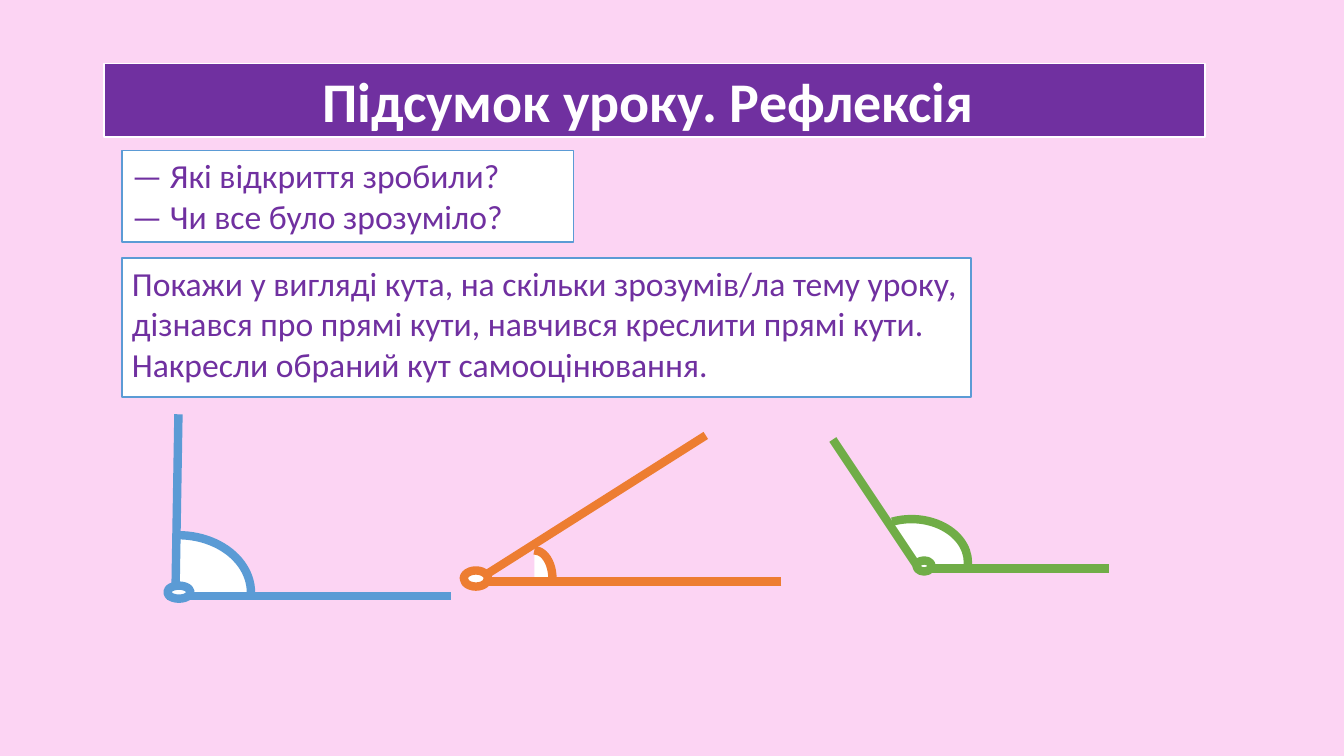
"""Build the lesson summary slide with three angles for self-assessment."""
from lxml.etree import SubElement
from pptx import Presentation
from pptx.dml.color import RGBColor
from pptx.enum.shapes import MSO_CONNECTOR as CONN, MSO_SHAPE as SHAPE
from pptx.enum.text import MSO_ANCHOR as ANCHOR, PP_ALIGN as ALIGN
from pptx.oxml.ns import qn
from pptx.util import Inches, Pt

PINK = RGBColor(0xFC, 0xD4, 0xF3)
PURPLE = RGBColor(0x70, 0x30, 0xA0)
WHITE = RGBColor(0xFF, 0xFF, 0xFF)
BLUE = RGBColor(0x5B, 0x9B, 0xD5)
ORANGE = RGBColor(0xED, 0x7D, 0x31)
GREEN = RGBColor(0x70, 0xAD, 0x47)


def add_shape(shapes, kind, box, fill, line, width):
    """Add a preset shape with a plain fill and outline."""
    sp = shapes.add_shape(kind, *map(Inches, box))
    sp.shadow.inherit = False
    sp.fill.solid()
    sp.fill.fore_color.rgb = fill
    sp.line.color.rgb = line
    sp.line.width = Pt(width)
    return sp


def write(sp, *lines, size=24, color=PURPLE, bold=False, align=ALIGN.LEFT, anchor=ANCHOR.TOP):
    """Write each line as a paragraph of the shape."""
    tf = sp.text_frame
    tf.word_wrap = True
    tf.vertical_anchor = anchor
    for i, line in enumerate(lines):
        p = tf.add_paragraph() if i else tf.paragraphs[0]
        p.alignment = align
        r = p.add_run()
        r.text = line
        r.font.name = "Calibri"
        r.font.size = Pt(size)
        r.font.bold = bold
        r.font.color.rgb = color


def add_side(shapes, start, end, color):
    """Add one straight side of an angle."""
    side = shapes.add_connector(CONN.STRAIGHT, *map(Inches, start + end))
    side.line.color.rgb = color
    side.line.width = Pt(6)
    SubElement(side._element.spPr, qn("a:effectLst"))


def add_angle(s, color, sides, vertex, center, radii, start=270, end=0):
    """Add a grouped angle: arc from start to end degrees, two sides and a vertex."""
    shapes = s.shapes.add_group_shape().shapes
    (x, y), (rx, ry) = center, radii
    arc = add_shape(shapes, SHAPE.ARC, (x - rx, y - ry, 2 * rx, 2 * ry), WHITE, color, 6)
    arc.adjustments[0] = start * 0.6
    arc.adjustments[1] = end * 0.6
    for side in sides:
        add_side(shapes, *side, color)
    add_shape(shapes, SHAPE.OVAL, vertex, WHITE, color, 6)


def main():
    """Create the presentation and save it."""
    prs = Presentation()
    prs.slide_width, prs.slide_height = Inches(13.33), Inches(7.5)
    s = prs.slides.add_slide(prs.slide_layouts[6])
    s.background.fill.solid()
    s.background.fill.fore_color.rgb = PINK

    questions = add_shape(s.shapes, SHAPE.RECTANGLE, (1.21, 1.49, 4.48, 0.91), WHITE, BLUE, 1)
    write(questions, "— Які відкриття зробили?", "— Чи все було зрозуміло?")

    add_angle(s, BLUE, [((1.74, 5.92), (1.77, 4.11)), ((4.47, 5.91), (1.66, 5.91))],
              vertex=(1.66, 5.81, 0.23, 0.13), center=(1.77, 5.88), radii=(0.72, 0.57))
    add_angle(s, ORANGE, [((7.75, 5.77), (4.76, 5.77)), ((4.68, 5.79), (7, 4.32))],
              vertex=(4.6, 5.66, 0.24, 0.16), center=(5.3, 5.74), radii=(0.18, 0.28))
    add_angle(s, GREEN, [((9.12, 5.65), (8.26, 4.36)), ((9.12, 5.64), (11, 5.64))],
              vertex=(9.09, 5.56, 0.15, 0.11), center=(9.04, 5.58), radii=(0.56, 0.43),
              start=244.6, end=4)

    task = add_shape(s.shapes, SHAPE.RECTANGLE, (1.21, 2.56, 8.42, 1.38), WHITE, BLUE, 1)
    write(task, "Покажи у вигляді кута, на скільки зрозумів/ла тему уроку, "
          "дізнався про прямі кути, навчився креслити прямі кути.",
          "Накресли обраний кут самооцінювання.")

    title = add_shape(s.shapes, SHAPE.RECTANGLE, (1.03, 0.63, 10.92, 0.73), PURPLE, WHITE, 1)
    write(title, "Підсумок уроку. Рефлексія ", size=40, color=WHITE, bold=True,
          align=ALIGN.CENTER, anchor=ANCHOR.MIDDLE)

    prs.save("out.pptx")


if __name__ == "__main__":
    main()
